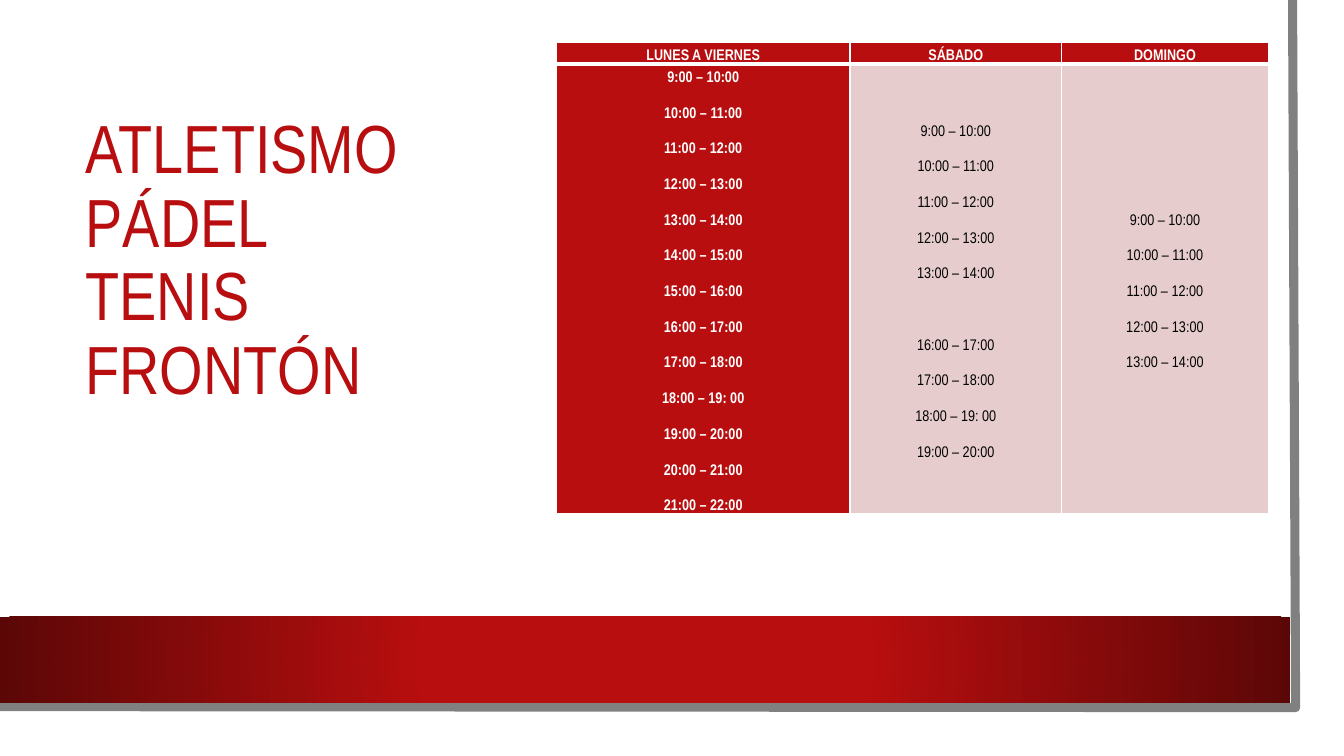
from lxml import etree
from pptx import Presentation
from pptx.dml.color import RGBColor
from pptx.enum.shapes import MSO_SHAPE
from pptx.enum.text import MSO_ANCHOR, MSO_AUTO_SIZE, PP_ALIGN
from pptx.oxml import parse_xml
from pptx.oxml.ns import nsdecls, qn
from pptx.util import Inches, Pt

RECT = MSO_SHAPE.RECTANGLE
MIDDLE = MSO_ANCHOR.MIDDLE
LEFT, CENTER = PP_ALIGN.LEFT, PP_ALIGN.CENTER
FONT = "Arial Narrow"
COLORS = {"red": "B80E0F", "dark": "5C0707", "pink": "E6CCCC",
          "gray": "808080", "white": "FFFFFF", "black": "000000"}


def rgb(name):
    return RGBColor.from_string(COLORS[name])


def write(tf, lines, size, color, bold=False, align=CENTER, spacing=1.5, after=10, gap_at=None):
    for i, line in enumerate(lines):
        p = tf.paragraphs[0] if i == 0 else tf.add_paragraph()
        p.text = line
        p.alignment = align
        p.line_spacing = spacing
        p.space_before = Pt(25.5 if i == gap_at else 0)
        p.space_after = Pt(after)
        for r in p.runs:
            r.font.name = FONT
            r.font.size = Pt(size)
            r.font.bold = bold
            r.font.color.rgb = rgb(color)


prs = Presentation()
prs.slide_width = Inches(13.33)
prs.slide_height = Inches(7.5)
s = prs.slides.add_slide(prs.slide_layouts[5])

panel = s.shapes.add_shape(RECT, 0, 0, Inches(13.1), Inches(7.27))
band = s.shapes.add_shape(RECT, 0, Inches(6.12), Inches(12.8), Inches(0.85))

builder = s.shapes.build_freeform(Inches(12.82), 0)
builder.add_line_segments([(Inches(12.85), Inches(7.02)), (Inches(-0.03), Inches(7.01))], close=False)
edge = builder.convert_to_shape()
edge.shadow.inherit = False
edge.fill.background()
edge.line.color.rgb = rgb("gray")
edge.line.width = Pt(6.5)
band._element.addprevious(edge._element)

for sp, color in ((panel, "white"), (band, "red")):
    sp.shadow.inherit = False
    sp.fill.solid()
    sp.fill.fore_color.rgb = rgb(color)
    sp.line.fill.background()

gradient = parse_xml(
    f'<a:gradFill {nsdecls("a")} rotWithShape="1"><a:gsLst>'
    f'<a:gs pos="34000"><a:srgbClr val="{COLORS["red"]}"/></a:gs>'
    f'<a:gs pos="100000"><a:srgbClr val="{COLORS["dark"]}"/></a:gs></a:gsLst>'
    '<a:path path="circle"><a:fillToRect l="50000" t="50000" r="50000" b="50000"/></a:path>'
    '</a:gradFill>')
solid = band._element.spPr.find(qn("a:solidFill"))
solid.getparent().replace(solid, gradient)

title = s.shapes.title
title.left, title.top = Inches(0.75), Inches(1.97)
title.width, title.height = Inches(11.37), Inches(1.26)
tf = title.text_frame
tf.word_wrap = True
tf.auto_size = MSO_AUTO_SIZE.NONE
tf.vertical_anchor = MIDDLE
write(tf, ["ATLETISMO\vPÁDEL\vTENIS\vFRONTÓN"], 48.6, "red", align=LEFT, spacing=0.9, after=0)
title._element.getparent().append(title._element)

morning = ["9:00 – 10:00", "10:00 – 11:00", "11:00 – 12:00", "12:00 – 13:00", "13:00 – 14:00"]
midday = ["14:00 – 15:00", "15:00 – 16:00"]
evening = ["16:00 – 17:00", "17:00 – 18:00", "18:00 – 19: 00", "19:00 – 20:00"]
night = ["20:00 – 21:00", "21:00 – 22:00"]
schedule = [
    ("LUNES A VIERNES", 2.91, morning + midday + evening + night, None),
    ("SÁBADO", 2.1, morning + evening, len(morning)),
    ("DOMINGO", 2.05, morning, None),
]

table = s.shapes.add_table(2, 3, Inches(5.52), Inches(0.42), Inches(7.06), Inches(4.1)).table
table.rows[0].height = Inches(0.16)
table.rows[1].height = Inches(3.94)

for col, (day, width, hours, gap_at) in enumerate(schedule):
    table.columns[col].width = Inches(width)
    for row, lines in enumerate(([day], hours)):
        strong = row == 0 or col == 0
        cell = table.cell(row, col)
        cell.vertical_anchor = MIDDLE
        cell.margin_left = cell.margin_right = Inches(0.06)
        cell.margin_top = cell.margin_bottom = 0
        write(cell.text_frame, lines, 11, "white" if strong else "black", strong,
              gap_at=gap_at if row else None)
        tcPr = cell._tc.get_or_add_tcPr()
        for side in ("L", "R", "T", "B"):
            weight = 3 if (row, side) in ((0, "B"), (1, "T")) else 1
            ln = etree.SubElement(tcPr, qn(f"a:ln{side}"), w=str(Pt(weight)))
            fill = etree.SubElement(ln, qn("a:solidFill"))
            etree.SubElement(fill, qn("a:srgbClr"), val=COLORS["white"])
        cell.fill.solid()
        cell.fill.fore_color.rgb = rgb("red" if strong else "pink")

prs.save("out.pptx")
